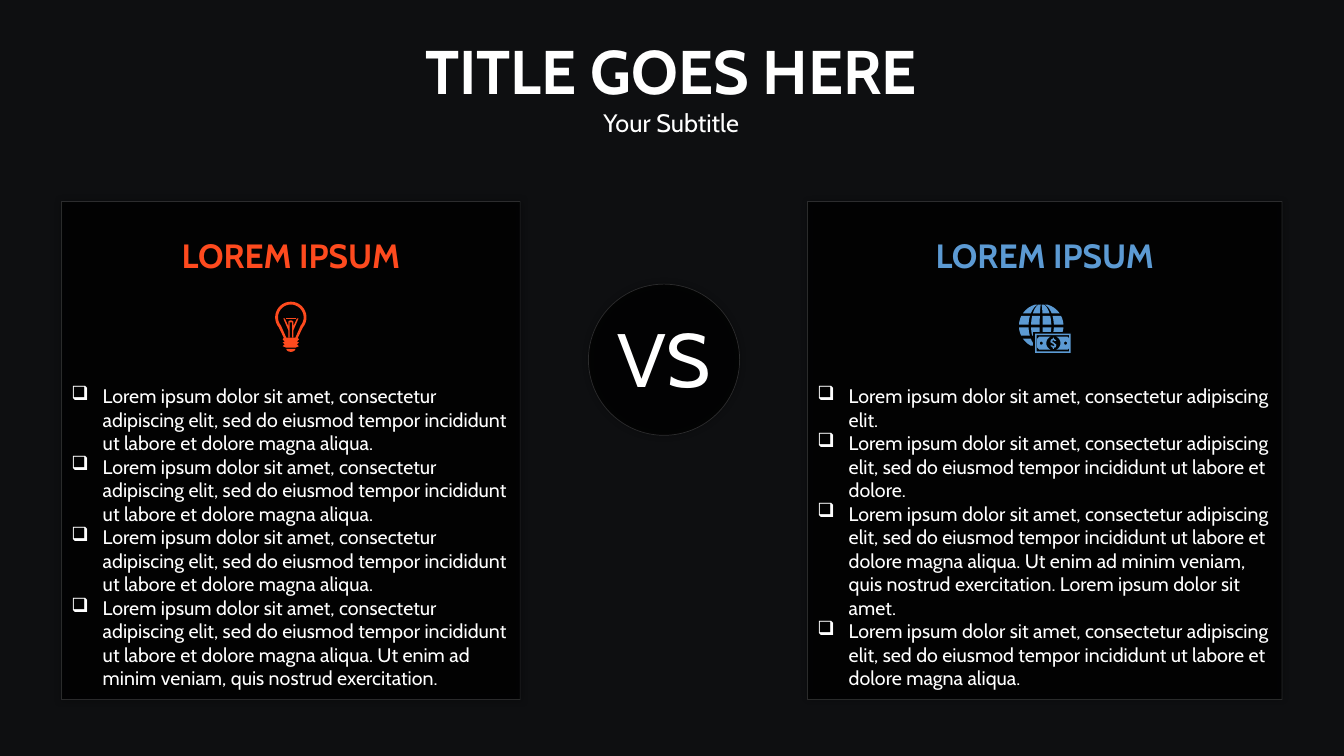
import math
from dataclasses import dataclass

import pptx
import pptx.dml.color
import pptx.enum.shapes
import pptx.enum.text
import pptx.oxml.ns
import pptx.util
from lxml import etree

Cm = pptx.util.Cm
Pt = pptx.util.Pt
Shape = pptx.enum.shapes.MSO_SHAPE
Align = pptx.enum.text.PP_ALIGN
qn = pptx.oxml.ns.qn
UNIT = Cm(0.03) * 0.85


@dataclass(frozen=True)
class Theme:
    font: str = "Cabin"
    backdrop: str = "0E0F11"
    panel: str = "000000"
    note_gap: str = "030404"
    text: str = "FFFFFF"
    orange: str = "FE4A1E"
    blue: str = "5C9AD3"
    title: int = 44
    subtitle: int = 18
    heading: int = 24
    body: int = 14
    versus: int = 54


THEME = Theme()
LOREM = "Lorem ipsum dolor sit amet, consectetur adipiscing elit"
LABORE = LOREM + ", sed do eiusmod tempor incididunt ut labore et dolore"
MAGNA = LABORE + " magna aliqua."
ENIM = MAGNA + " Ut enim ad minim veniam, quis nostrud exercitation."
LEFT_POINTS = [MAGNA, MAGNA, MAGNA, ENIM]
RIGHT_POINTS = [LOREM + ".", LABORE + ".", ENIM + " Lorem ipsum dolor sit amet.", MAGNA]


def rgb(code):
    return pptx.dml.color.RGBColor.from_string(code)


def add_bullet(para):
    props = para._p.get_or_add_pPr()
    props.set("marL", str(Cm(0.79)))
    props.set("indent", str(-Cm(0.79)))
    etree.SubElement(props, qn("a:buChar"), char="❑")


def add_text(page, box, lines, align=Align.CENTER, bullets=False):
    frame = page.shapes.add_textbox(*map(Cm, box)).text_frame
    frame.word_wrap = True
    frame.auto_size = pptx.enum.text.MSO_AUTO_SIZE.SHAPE_TO_FIT_TEXT
    frame.text = "\n".join(line[0] for line in lines)
    for para, (_, size, color, bold) in zip(frame.paragraphs, lines):
        para.alignment = align
        if bullets:
            add_bullet(para)
        for span in para.runs:
            span.font.name = THEME.font
            span.font.size = Pt(size)
            span.font.color.rgb = rgb(color)
            span.font.bold = bold


def add_glass(page, kind, box, opacity):
    shape = page.shapes.add_shape(kind, *map(Cm, box))
    shape.shadow.inherit = False
    shape.fill.solid()
    shape.fill.fore_color.rgb = rgb(THEME.panel)
    shape.line.color.rgb = rgb(THEME.text)
    shape.line.width = Pt(0.5)
    props = shape._element.spPr
    for color, percent in zip(list(props.iter(qn("a:srgbClr"))), (opacity, 15)):
        etree.SubElement(color, qn("a:alpha"), val=str(percent * 1000))
    shadow = etree.SubElement(props.find(qn("a:effectLst")), qn("a:outerShdw"),
                              blurRad=str(Pt(5)), dist="0", dir="0", algn="ctr")
    shade = etree.SubElement(shadow, qn("a:srgbClr"), val=THEME.panel)
    etree.SubElement(shade, qn("a:alpha"), val="40000")


def arc(x, y, radius, start, end, height=None, steps=24):
    angles = [math.radians(start + (end - start) * i / steps) for i in range(steps + 1)]
    return [(x + radius * math.cos(a), y + (height or radius) * math.sin(a)) for a in angles]


def rectangle(left, top, right, bottom):
    return [(left, top), (right, top), (right, bottom), (left, bottom)]


def mirror(points, axis=0):
    return [(2 * axis - x, y) for x, y in points]


def add_outline(group, origin, color, *contours):
    scaled = [[(x * UNIT, y * UNIT) for x, y in contour] for contour in contours]
    builder = group.shapes.build_freeform(*scaled[0][0])
    for index, contour in enumerate(scaled):
        if index:
            builder.move_to(*contour[0])
        builder.add_line_segments(contour[1:], close=True)
    shape = builder.convert_to_shape(*origin)
    shape.shadow.inherit = False
    shape.fill.solid()
    shape.fill.fore_color.rgb = rgb(color)
    shape.line.fill.background()


def draw_bulb(group, origin, color):
    screw = [(-7, 10.5), (-8, 12.5), (-6, 14.3), (-8, 15.5), (-6, 17), (-8, 19), (-4.5, 20.5)]
    outer = arc(0, -9.5, 15.5, 40, -220) + screw + mirror(screw)[::-1]
    inner = arc(0, -9.5, 12.7, 40, -220) + [(-4.5, 10.5), (4.5, 10.5)]
    wire = [(7.5, -8.5), (6, -8.5), (2.4, -0.5), (2.4, -5.5), (1.2, -5.5),
            (1.2, 10.5), (2.4, 10.5), (2.4, 3.5)]
    add_outline(group, origin, color, outer, inner)
    for part in (wire, mirror(wire), rectangle(-5, -9, 5, -8),
                 arc(0, -5.5, 2, 0, 360, 1), arc(0, 21.5, 4.5, 0, 180, 3)):
        add_outline(group, origin, color, part)


def globe_cell(inner, outer, top, bottom, x=-3.5, y=-1, radius=22):
    rows = [top + (bottom - top) * i / 8 for i in range(9)]
    spread = [math.sqrt(1 - (row / radius) ** 2) for row in rows]
    far = [(x + outer * s, y + row) for s, row in zip(spread, rows)]
    near = [(x + inner * s, y + row) for s, row in zip(spread, rows)]
    return far + near[::-1]


def draw_globe(group, origin, color):
    for inner, outer in ((12.5, 22), (1.5, 10)):
        for side in (-1, 1):
            for top, bottom in ((-21, -12.5), (-10, -1.5), (1.5, 9.5)):
                add_outline(group, origin, color,
                            globe_cell(side * inner, side * outer, top, bottom))
    add_outline(group, origin, color, globe_cell(-12.5, -22, 12.5, 19.5))
    add_outline(group, origin, THEME.note_gap, rectangle(-11.5, 5, 27, 27))
    add_outline(group, origin, color, rectangle(-9.5, 6.5, 25.5, 25.5),
                rectangle(-8, 8, 24, 24))
    flap = arc(8.5, 16, 7, 245, 115) + [(-5.5, 22.5), (-7.5, 20.5), (-7.5, 11.5), (-5.5, 9.5)]
    dot = arc(-3.5, 16, 1.5, 0, 360)
    for turn in (lambda points: points, lambda points: mirror(points, 8.5)):
        add_outline(group, origin, color, turn(flap), turn(dot))
    dollar = [(8, 10.5), (9, 10.5), (9, 11.5), (11.5, 13.5), (9.8, 14), (8.5, 13), (7, 14),
              (9, 15.5), (11.5, 17.5), (10.8, 20), (9, 20.5), (9, 21.5), (8, 21.5),
              (8, 20.5), (5.5, 18.5), (7, 18), (8.5, 19), (9.8, 18), (8, 16.5),
              (5.5, 15), (6, 12.5), (8, 11.5)]
    add_outline(group, origin, color, dollar)


def add_panel(page, box, color, points, draw_icon):
    left, top, width, height = box
    add_glass(page, Shape.RECTANGLE, box, 75)
    add_text(page, (left, top + 0.72, width, 1.28),
             [("LOREM IPSUM", THEME.heading, color, True)])
    add_text(page, (left, top + 4.47, width, 8.03),
             [(point, THEME.body, THEME.text, False) for point in points],
             Align.LEFT, bullets=True)
    origin = (Cm(left + width / 2), Cm(top + 3.16))
    draw_icon(page.shapes.add_group_shape(), origin, color)


def add_versus(page, box):
    left, top, width, height = box
    add_glass(page, Shape.OVAL, box, 70)
    add_text(page, (left - 0.64, top + 0.58, width + 1.28, 2.64),
             [("VS", THEME.versus, THEME.text, False)])


def add_title(page, box):
    add_text(page, box, [("TITLE GOES HERE", THEME.title, THEME.text, True),
                         ("Your Subtitle", THEME.subtitle, THEME.text, False)])


def main():
    deck = pptx.Presentation()
    deck.slide_width, deck.slide_height = Cm(33.87), Cm(19.05)
    page = deck.slides.add_slide(deck.slide_layouts[6])
    page.background.fill.solid()
    page.background.fill.fore_color.rgb = rgb(THEME.backdrop)
    add_panel(page, (1.55, 5.08, 11.56, 12.55), THEME.orange, LEFT_POINTS, draw_bulb)
    add_panel(page, (20.35, 5.08, 11.96, 12.55), THEME.blue, RIGHT_POINTS, draw_globe)
    add_versus(page, (14.83, 7.16, 3.81, 3.81))
    add_title(page, (9.27, 0.71, 15.29, 2.9))
    deck.save("out.pptx")


if __name__ == "__main__":
    main()
